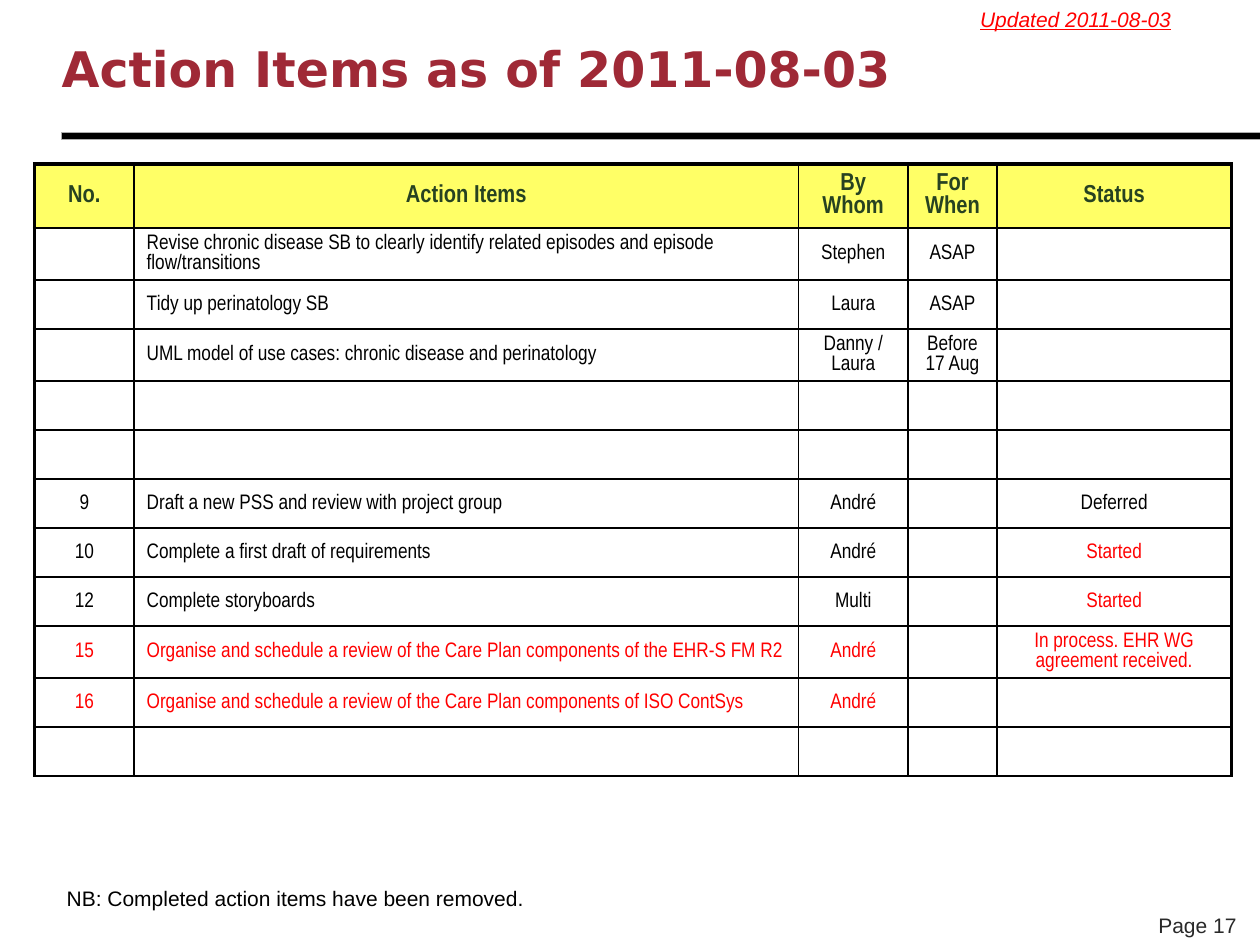
from dataclasses import dataclass

from lxml.etree import SubElement
from pptx import Presentation
from pptx.dml.color import RGBColor
from pptx.enum.shapes import MSO_SHAPE
from pptx.enum.text import MSO_ANCHOR, PP_ALIGN
from pptx.oxml.ns import qn
from pptx.util import Pt

BLACK, RED = "000000", "FF0000"
HEADER_FILL, HEADER_TEXT = "FFFF66", "274221"
THIN, THICK = 1, 2.25
TABLE_FONT, HEADER_SIZE, BODY_SIZE = "Arial Narrow", 14, 12
COL_WIDTHS = [56.8, 379.8, 62.4, 51, 133.8]
HEADER_HEIGHT, ROW_HEIGHT = 36.7, 28
HEADINGS = ["No.", "Action Items", "By Whom", "For When", "Status"]


@dataclass
class Action:
    no: str = ""
    item: str = ""
    whom: str = ""
    when: str = ""
    status: str = ""
    color: str = BLACK
    status_color: str = RED


@dataclass
class Label:
    text: str
    box: tuple[float, float, float, float]
    font: str = "Arial"
    size: float = 12
    color: str = BLACK
    bold: bool = False
    italic: bool = False
    underline: bool = False
    align: PP_ALIGN = PP_ALIGN.LEFT
    anchor: MSO_ANCHOR = MSO_ANCHOR.TOP
    wrap: bool = True
    inset: bool = True


ACTIONS = [
    Action(item="Revise chronic disease SB to clearly identify related episodes "
                "and episode flow/transitions", whom="Stephen", when="ASAP"),
    Action(item="Tidy up perinatology SB", whom="Laura", when="ASAP"),
    Action(item="UML model of use cases: chronic disease and perinatology",
           whom="Danny / Laura", when="Before 17 Aug"),
    Action(),
    Action(),
    Action("9", "Draft a new PSS and review with project group", "André",
           status="Deferred", status_color=BLACK),
    Action("10", "Complete a first draft of requirements", "André", status="Started"),
    Action("12", "Complete storyboards", "Multi", status="Started"),
    Action("15", "Organise and schedule a review of the Care Plan components of the EHR-S FM R2",
           "André", status="In process. EHR WG agreement received.", color=RED),
    Action("16", "Organise and schedule a review of the Care Plan components of ISO ContSys",
           "André", color=RED),
    Action(),
]

LABELS = [
    Label("Action Items as of 2011-08-03", (35.3, 9, 612, 59), "DejaVu Sans", 28,
          "9F2936", bold=True, anchor=MSO_ANCHOR.MIDDLE, inset=False),
    Label("Page 17", (635.2, 517.7, 78.5, 21.6), color="292929",
          align=PP_ALIGN.RIGHT, anchor=MSO_ANCHOR.BOTTOM),
    Label("NB: Completed action items have been removed.", (31, 502.6, 278, 21.6), wrap=False),
    Label("Updated 2011-08-03", (553, 0, 124.6, 21.6), color=RED,
          italic=True, underline=True, wrap=False),
]


def rgb(color: str) -> RGBColor:
    return RGBColor.from_string(color)


def add_run(p, text: str, font: str, size: float, color: str, bold: bool = False):
    r = p.add_run()
    r.text = text
    r.font.name, r.font.size, r.font.bold = font, Pt(size), bold
    r.font.color.rgb = rgb(color)
    return r


def add_label(s, label: Label) -> None:
    tf = s.shapes.add_textbox(*map(Pt, label.box)).text_frame
    tf.word_wrap, tf.vertical_anchor = label.wrap, label.anchor
    if not label.inset:
        tf.margin_left = tf.margin_top = tf.margin_right = tf.margin_bottom = 0
    p = tf.paragraphs[0]
    p.alignment = label.align
    r = add_run(p, label.text, label.font, label.size, label.color, label.bold)
    r.font.italic, r.font.underline = label.italic, label.underline


def add_title_rule(s) -> None:
    sp = s.shapes.add_shape(MSO_SHAPE.RECTANGLE, Pt(35.3), Pt(75.9), Pt(685), Pt(4))
    sp.shadow.inherit = False
    sp.fill.solid()
    sp.fill.fore_color.rgb = rgb(BLACK)
    sp.line.color.rgb = rgb("ADADAD")
    sp.line.width = Pt(0.75)


def set_borders(cell, left: float, right: float, top: float, bottom: float) -> None:
    tc_pr = cell._tc.get_or_add_tcPr()
    for side, width in zip("LRTB", (left, right, top, bottom)):
        ln = SubElement(tc_pr, qn(f"a:ln{side}"), w=str(Pt(width)))
        SubElement(SubElement(ln, qn("a:solidFill")), qn("a:srgbClr"), val=BLACK)


def write_cell(cell, text: str, color: str, col: int, header: bool) -> None:
    p = cell.text_frame.paragraphs[0]
    if not text:
        # Keeps the default text size from stretching an empty row.
        SubElement(p._p, qn("a:endParaRPr"), sz=str(BODY_SIZE * 100))
        return
    p.alignment = PP_ALIGN.LEFT if col == 1 and not header else PP_ALIGN.CENTER
    p.line_spacing = 1.0
    p_pr = p._p.get_or_add_pPr()
    SubElement(SubElement(p_pr, qn("a:spcBef")), qn("a:spcPct"), val="20000")
    if col == 0 and not header:
        p_pr.set("marL", str(Pt(18)))
        p_pr.set("indent", str(-Pt(18)))
    add_run(p, text, TABLE_FONT, HEADER_SIZE if header else BODY_SIZE, color, header)


def add_action_table(s) -> None:
    rows = [[(h, HEADER_TEXT) for h in HEADINGS]]
    for a in ACTIONS:
        rows.append([(t, a.color) for t in (a.no, a.item, a.whom, a.when)]
                    + [(a.status, a.status_color)])
    heights = [HEADER_HEIGHT] + [ROW_HEIGHT] * len(ACTIONS)
    table = s.shapes.add_table(len(rows), len(COL_WIDTHS), Pt(19.8), Pt(93.6),
                               Pt(sum(COL_WIDTHS)), Pt(sum(heights))).table
    table.first_row = table.horz_banding = False
    for column, width in zip(table.columns, COL_WIDTHS):
        column.width = Pt(width)
    last_col = len(COL_WIDTHS) - 1
    for i, (row, height) in enumerate(zip(rows, heights)):
        table.rows[i].height = Pt(height)
        for j, (text, color) in enumerate(row):
            cell = table.cell(i, j)
            cell.vertical_anchor = MSO_ANCHOR.MIDDLE
            set_borders(cell, left=THICK if j == 0 else THIN,
                        right=THICK if j == last_col else THIN,
                        top=THICK if i == 0 else THIN, bottom=THIN)
            if i == 0:
                cell.fill.solid()
                cell.fill.fore_color.rgb = rgb(HEADER_FILL)
            else:
                cell.fill.background()
            write_cell(cell, text, color, j, header=i == 0)


def main() -> None:
    prs = Presentation()
    prs.slide_width, prs.slide_height = Pt(720), Pt(540)
    s = prs.slides.add_slide(prs.slide_layouts[6])
    add_title_rule(s)
    add_action_table(s)
    for label in LABELS:
        add_label(s, label)
    prs.save("out.pptx")


if __name__ == "__main__":
    main()
